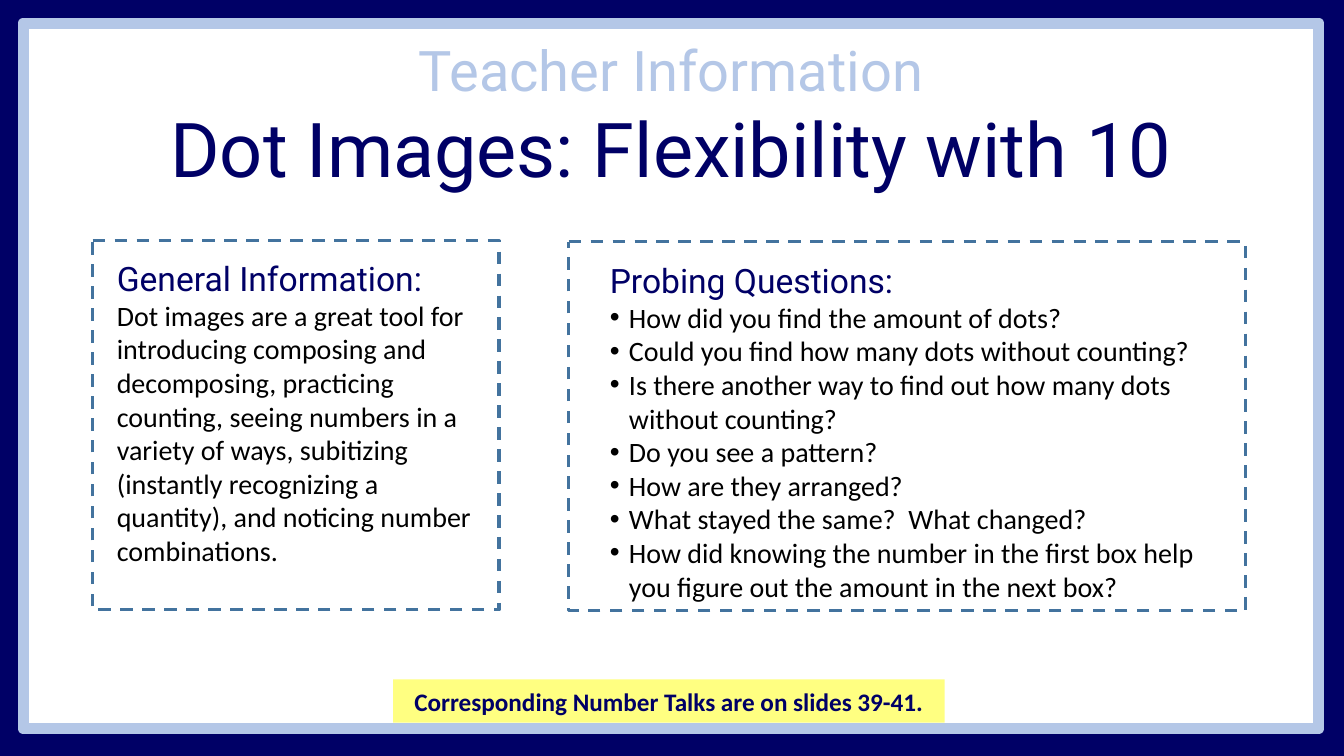
from lxml import etree
from pptx import Presentation
from pptx.dml.color import RGBColor
from pptx.enum.dml import MSO_LINE
from pptx.enum.shapes import MSO_SHAPE
from pptx.enum.text import MSO_ANCHOR, PP_ALIGN
from pptx.oxml.ns import qn
from pptx.util import Inches, Pt

RECT = MSO_SHAPE.RECTANGLE
ROUND = MSO_SHAPE.ROUNDED_RECTANGLE
DASH = MSO_LINE.DASH
MIDDLE = MSO_ANCHOR.MIDDLE
LEFT, CENTER = PP_ALIGN.LEFT, PP_ALIGN.CENTER

COLORS = {
    "navy": "000066",
    "sky": "B4C7E7",
    "white": "FFFFFF",
    "yellow": "FFFF81",
    "steel": "43739E",
    "black": "000000",
}

FORMATS = {
    "label": {"name": "Roboto", "size": Pt(40), "color": "sky"},
    "title": {"name": "Roboto", "size": Pt(54), "color": "navy"},
    "head": {"name": "Roboto", "size": Pt(24), "color": "navy"},
    "body": {"name": "Calibri", "size": Pt(20), "color": "black"},
    "note": {"name": "Calibri", "size": Pt(18), "color": "navy", "bold": True},
}

ABOUT = (
    "Dot images are a great tool for introducing composing and decomposing, "
    "practicing counting, seeing numbers in a variety of ways, subitizing "
    "(instantly recognizing a quantity), and noticing number combinations."
)
PROBES = [
    "How did you find the amount of dots?",
    "Could you find how many dots without counting?",
    "Is there another way to find out how many dots without counting?",
    "Do you see a pattern?",
    "How are they arranged?",
    "What stayed the same?  What changed?",
    "How did knowing the number in the first box help you figure out "
    "the amount in the next box?",
]


def tint(name):
    return RGBColor.from_string(COLORS[name])


def add_box(slide, box, kind=RECT, fill=None, line=None, width=1):
    shape = slide.shapes.add_shape(kind, *map(Inches, box))
    shape.shadow.inherit = False
    if fill:
        shape.fill.solid()
        shape.fill.fore_color.rgb = tint(fill)
    else:
        shape.fill.background()
    if line:
        shape.line.color.rgb = tint(line)
        shape.line.width = Pt(width)
    else:
        shape.line.fill.background()
    return shape


def add_bullet(para):
    props = para._p.get_or_add_pPr()
    props.set("marL", str(Inches(0.19)))
    props.set("indent", str(-Inches(0.19)))
    font = etree.SubElement(props, qn("a:buFont"))
    font.set("typeface", "Arial")
    mark = etree.SubElement(props, qn("a:buChar"))
    mark.set("char", "•")


def write(frame, lines, align=LEFT):
    frame.word_wrap = True
    for index, (text, style, dotted) in enumerate(lines):
        para = frame.add_paragraph() if index else frame.paragraphs[0]
        para.alignment = align
        if dotted:
            add_bullet(para)
        run = para.add_run()
        run.text = text
        for key, value in FORMATS[style].items():
            if key == "color":
                run.font.color.rgb = tint(value)
            else:
                setattr(run.font, key, value)


def add_text(slide, box, lines, align=LEFT):
    shape = slide.shapes.add_textbox(*map(Inches, box))
    write(shape.text_frame, lines, align)


def add_title(slide, box):
    lines = [
        ("Teacher Information", "label", False),
        ("Dot Images: Flexibility with 10", "title", False),
    ]
    add_text(slide, box, lines, CENTER)


def add_panel(slide, box, pad, lines):
    left, top, width, height = box
    side, above, right = pad
    inner = (left + side, top + above, width - side - right, height - above)
    add_text(slide, inner, lines)
    frame = add_box(slide, box, ROUND, line="steel", width=2.25)
    frame.adjustments[0] = 0
    frame.line.dash_style = DASH


def add_note(slide, box):
    shape = add_box(slide, box, fill="yellow")
    shape.text_frame.vertical_anchor = MIDDLE
    text = "Corresponding Number Talks are on slides 39-41."
    write(shape.text_frame, [(text, "note", False)], CENTER)


def main():
    deck = Presentation()
    deck.slide_width, deck.slide_height = Inches(13.33), Inches(7.5)
    slide = deck.slides.add_slide(deck.slide_layouts[6])
    slide.background.fill.solid()
    slide.background.fill.fore_color.rgb = tint("navy")

    add_box(slide, (0.23, 0.23, 12.85, 7), fill="white", line="sky", width=8)
    add_note(slide, (3.9, 6.74, 5.47, 0.43))
    add_title(slide, (0.23, 0.3, 12.85, 1.68))
    about = [("General Information:", "head", False), (ABOUT, "body", False)]
    add_panel(slide, (0.92, 2.39, 4.03, 3.66), (0.14, 0.12, 0), about)
    probes = [("Probing Questions:", "head", False)]
    probes += [(text, "body", True) for text in PROBES]
    add_panel(slide, (5.64, 2.4, 6.71, 3.66), (0.31, 0.13, 0.03), probes)

    deck.save("out.pptx")


if __name__ == "__main__":
    main()
